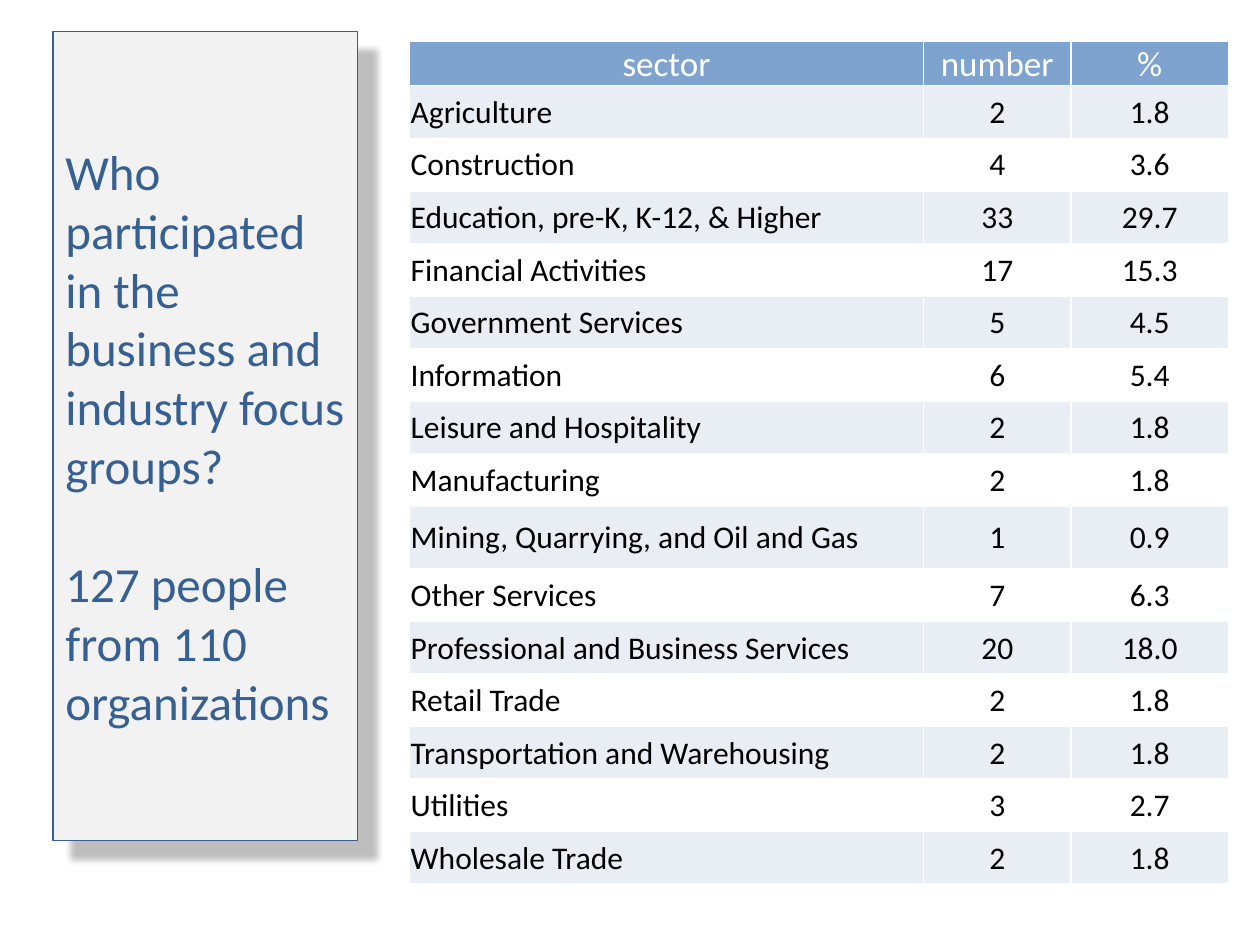
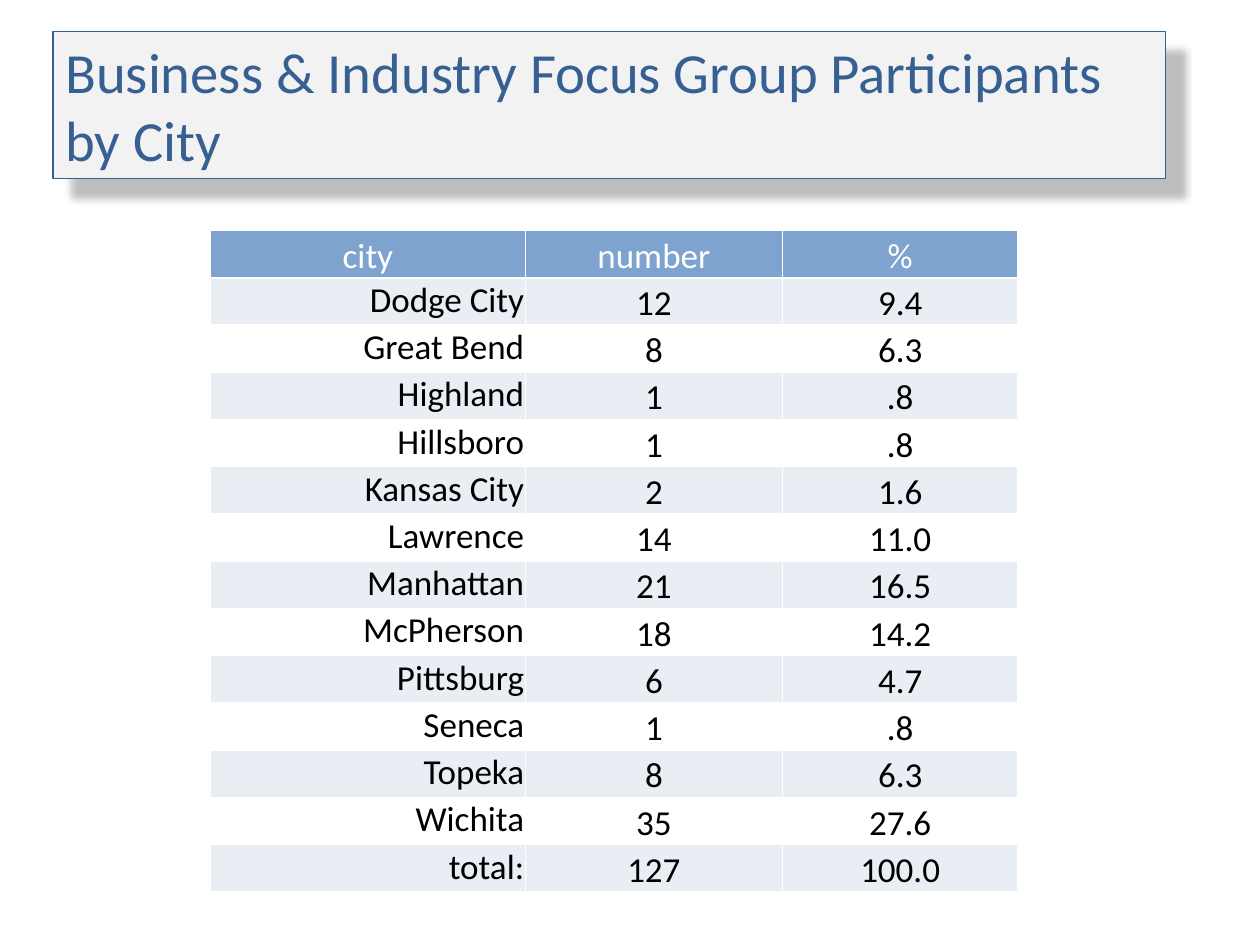
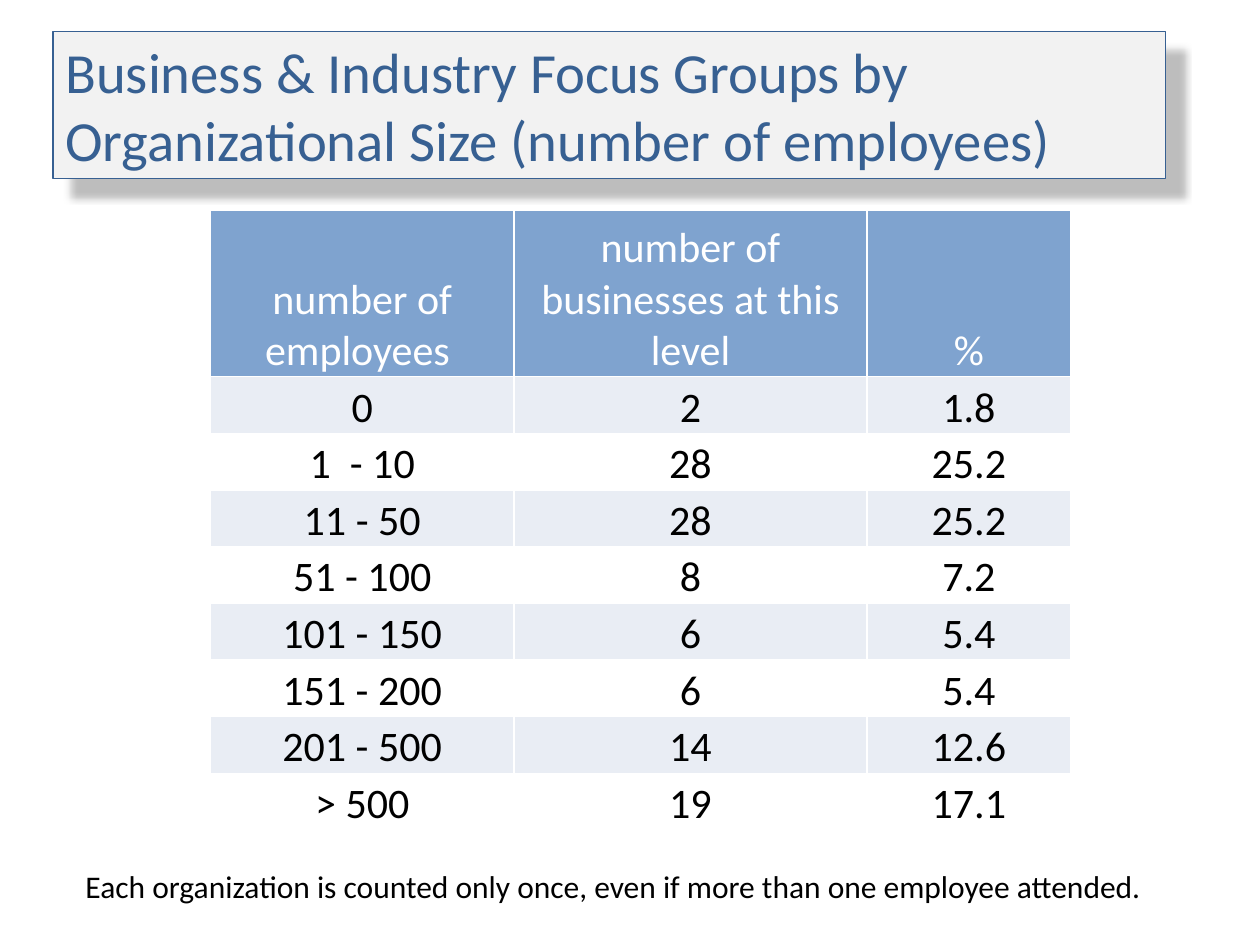
from dataclasses import dataclass

from lxml.etree import SubElement
from pptx import Presentation
from pptx.dml.color import RGBColor
from pptx.enum.shapes import MSO_SHAPE
from pptx.enum.text import MSO_ANCHOR, PP_ALIGN
from pptx.oxml import parse_xml
from pptx.oxml.ns import nsdecls, qn
from pptx.util import Inches, Pt


@dataclass(frozen=True)
class Theme:
    font: str = "Calibri"
    title: str = "376092"
    title_panel: str = "F2F2F2"
    header: str = "7FA3CF"
    band: str = "E9EDF4"
    white: str = "FFFFFF"
    black: str = "000000"
    side_title_size: float = 28
    top_title_size: float = 32.4
    header_size: float = 20
    sector_size: float = 18
    city_size: float = 20
    employee_size: float = 24
    note_size: float = 18


THEME = Theme()
SIDE_PANEL = (0.42, 0.25, 2.42, 6.42)
TOP_PANEL = (0.42, 0.25, 8.83, 1.17)

SECTORS = [
    ("sector", "number", "%"),
    ("Agriculture", "2", "1.8"),
    ("Construction", "4", "3.6"),
    ("Education, pre-K, K-12, & Higher", "33", "29.7"),
    ("Financial Activities", "17", "15.3"),
    ("Government Services", "5", "4.5"),
    ("Information", "6", "5.4"),
    ("Leisure and Hospitality", "2", "1.8"),
    ("Manufacturing", "2", "1.8"),
    ("Mining, Quarrying, and Oil and Gas", "1", "0.9"),
    ("Other Services", "7", "6.3"),
    ("Professional and Business Services", "20", "18.0"),
    ("Retail Trade", "2", "1.8"),
    ("Transportation and Warehousing", "2", "1.8"),
    ("Utilities", "3", "2.7"),
    ("Wholesale Trade", "2", "1.8"),
]
CITIES = [
    ("city", "number", "%"),
    ("Dodge City", "12", "9.4"),
    ("Great Bend", "8", "6.3"),
    ("Highland", "1", ".8"),
    ("Hillsboro", "1", ".8"),
    ("Kansas City", "2", "1.6"),
    ("Lawrence", "14", "11.0"),
    ("Manhattan", "21", "16.5"),
    ("McPherson", "18", "14.2"),
    ("Pittsburg", "6", "4.7"),
    ("Seneca", "1", ".8"),
    ("Topeka", "8", "6.3"),
    ("Wichita", "35", "27.6"),
    ("total:", "127", "100.0"),
]
EMPLOYEES = [
    ("number of employees ", "number of businesses at this level", "%"),
    ("0", "2", "1.8"),
    ("1  - 10", "28", "25.2"),
    ("11 - 50", "28", "25.2"),
    ("51 - 100", "8", "7.2"),
    ("101 - 150", "6", "5.4"),
    ("151 - 200", "6", "5.4"),
    ("201 - 500", "14", "12.6"),
    ("> 500", "19", "17.1"),
]

# tall: heights of the rows that differ; the others share the rest equally
# anchors: vertical anchor of body labels, then of body figures
SLIDES = [
    dict(
        title="Who participated in the business and industry focus groups?\n"
              "127 people from 110 organizations",
        panel=SIDE_PANEL, title_size=THEME.side_title_size,
        rows=SECTORS, place=(3.25, 0.33, 6.5, 6.67), columns=(4.08, 1.17, 1.25),
        tall={0: 0.33, 9: 0.5}, header_size=THEME.header_size,
        body_size=THEME.sector_size, label_align=PP_ALIGN.LEFT,
        anchors=(MSO_ANCHOR.MIDDLE, MSO_ANCHOR.MIDDLE), note=None,
    ),
    dict(
        title="Business & Industry Focus Group Participants by City",
        panel=TOP_PANEL, title_size=THEME.top_title_size,
        rows=CITIES, place=(1.67, 1.83, 6.42, 5.25), columns=(2.5, 2.04, 1.87),
        tall={}, header_size=THEME.header_size,
        body_size=THEME.city_size, label_align=PP_ALIGN.RIGHT,
        anchors=(MSO_ANCHOR.TOP, MSO_ANCHOR.BOTTOM), note=None,
    ),
    dict(
        title="Business & Industry Focus Groups by Organizational Size (number of employees)",
        panel=TOP_PANEL, title_size=THEME.top_title_size,
        rows=EMPLOYEES, place=(1.67, 1.67, 6.83, 4.92), columns=(2.41, 2.8, 1.62),
        tall={0: 1.32}, header_size=THEME.employee_size,
        body_size=THEME.employee_size, label_align=PP_ALIGN.CENTER,
        anchors=(MSO_ANCHOR.BOTTOM, MSO_ANCHOR.BOTTOM),
        note="Each organization is counted only once, even if more than one employee attended.",
    ),
]


def write(frame, text, *, size, color, align=PP_ALIGN.LEFT, gap=0):
    """Fill a text frame, one paragraph per line, with gap points between them."""
    for index, line in enumerate(text.split("\n")):
        paragraph = frame.add_paragraph() if index else frame.paragraphs[0]
        paragraph.alignment = align
        paragraph.space_before = Pt(gap if index else 0)
        run = paragraph.add_run()
        run.text = line
        run.font.name = THEME.font
        run.font.size = Pt(size)
        run.font.color.rgb = RGBColor.from_string(color)


def style_cell(cell, fill):
    """Set the tight margins, the white borders and the fill of a cell."""
    cell.margin_left = cell.margin_right = cell.margin_top = Inches(0.01)
    cell.margin_bottom = 0
    properties = cell._tc.get_or_add_tcPr()
    for side in ("a:lnL", "a:lnR", "a:lnT", "a:lnB"):
        border = SubElement(properties, qn(side), w=str(Pt(1)))
        solid = SubElement(border, qn("a:solidFill"))
        SubElement(solid, qn("a:srgbClr"), val=THEME.white)
    if fill:
        cell.fill.solid()
        cell.fill.fore_color.rgb = RGBColor.from_string(fill)
    else:
        cell.fill.background()


deck = Presentation()
deck.slide_width, deck.slide_height = Inches(10), Inches(7.5)

for content in SLIDES:
    slide = deck.slides.add_slide(deck.slide_layouts[6])

    panel = slide.shapes.add_shape(MSO_SHAPE.RECTANGLE, *map(Inches, content["panel"]))
    panel.fill.solid()
    panel.fill.fore_color.rgb = RGBColor.from_string(THEME.title_panel)
    panel.line.color.rgb = RGBColor.from_string(THEME.title)
    panel.line.width = Pt(0.75)
    panel.shadow.inherit = False
    panel._element.spPr.find(qn("a:effectLst")).append(parse_xml(
        f'<a:outerShdw {nsdecls("a")} blurRad="{Pt(4)}" dist="{Pt(15)}" dir="2700000" '
        f'algn="tl" rotWithShape="0"><a:srgbClr val="{THEME.black}">'
        '<a:alpha val="25000"/></a:srgbClr></a:outerShdw>'))
    panel.text_frame.word_wrap = True
    panel.text_frame.vertical_anchor = MSO_ANCHOR.MIDDLE
    write(panel.text_frame, content["title"], size=content["title_size"],
          color=THEME.title, gap=34)

    rows, tall = content["rows"], content["tall"]
    table = slide.shapes.add_table(
        len(rows), len(rows[0]), *map(Inches, content["place"])).table
    table.first_row = table.horz_banding = False
    for column, width in zip(table.columns, content["columns"]):
        column.width = Inches(width)
    even_height = (content["place"][3] - sum(tall.values())) / (len(rows) - len(tall))

    for row_index, row in enumerate(rows):
        table.rows[row_index].height = Inches(tall.get(row_index, even_height))
        is_header = row_index == 0
        band = THEME.band if row_index % 2 else None
        for column_index, text in enumerate(row):
            cell = table.cell(row_index, column_index)
            is_label = column_index == 0 and not is_header
            label_anchor, figure_anchor = content["anchors"]
            style_cell(cell, THEME.header if is_header else band)
            cell.vertical_anchor = (MSO_ANCHOR.BOTTOM if is_header
                                    else label_anchor if is_label else figure_anchor)
            write(cell.text_frame, text,
                  size=content["header_size" if is_header else "body_size"],
                  color=THEME.white if is_header else THEME.black,
                  align=content["label_align"] if is_label else PP_ALIGN.CENTER)

    if content["note"]:
        note = slide.shapes.add_textbox(*map(Inches, (0.58, 6.83, 8.63, 0.4)))
        note.text_frame.word_wrap = False
        write(note.text_frame, content["note"], size=THEME.note_size, color=THEME.black)

deck.save("out.pptx")
